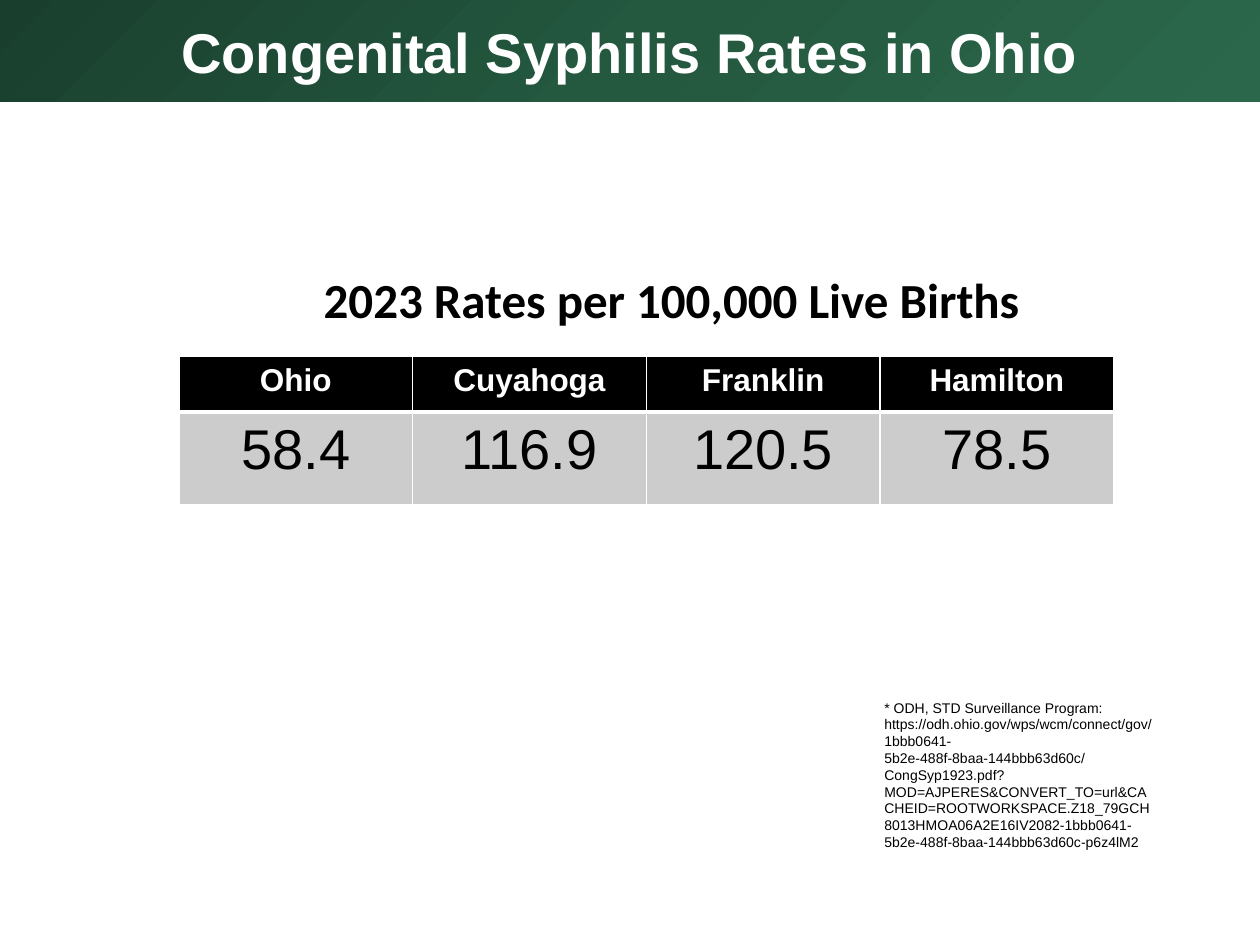
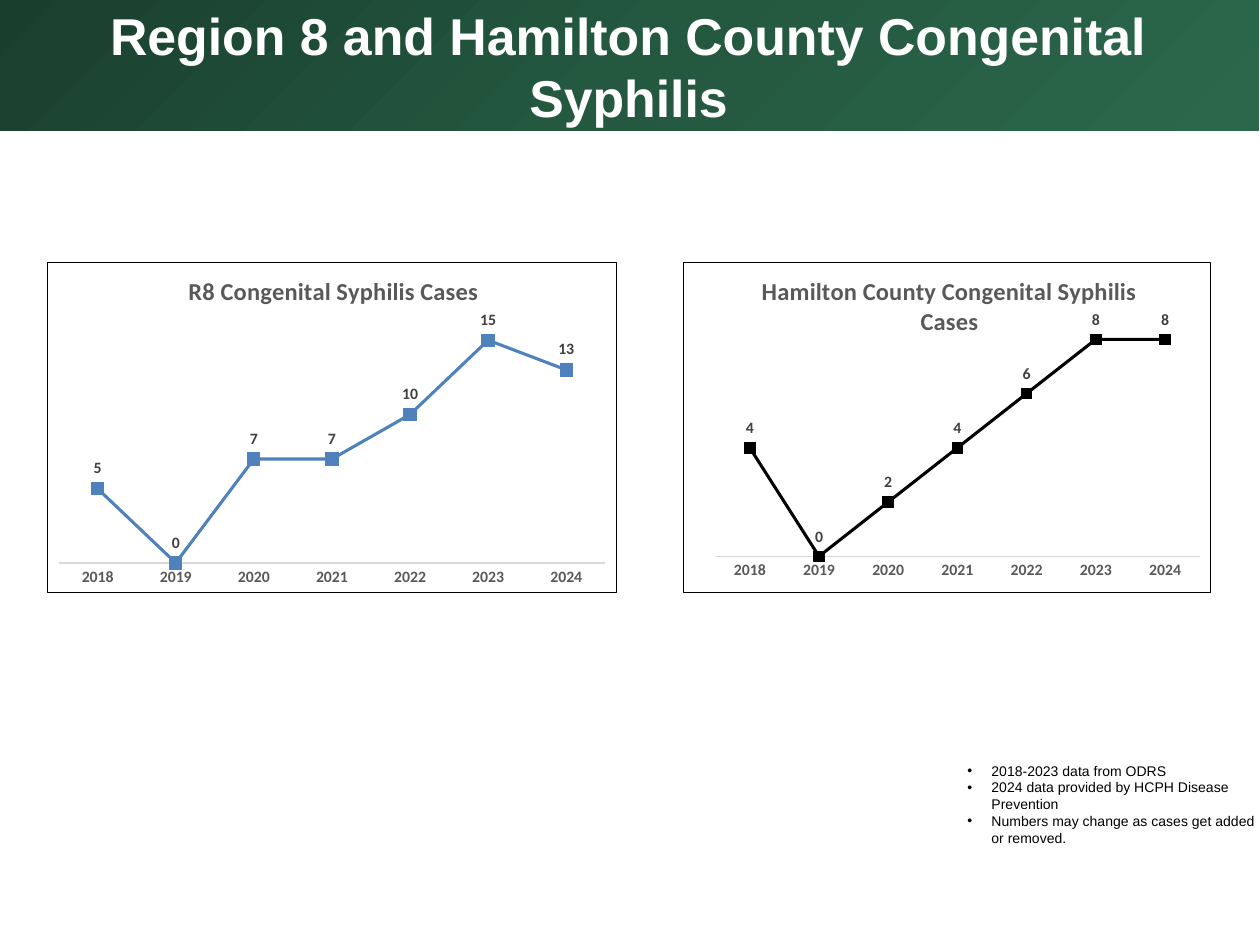
import copy

import lxml.etree
import pptx
import pptx.chart.data
import pptx.dml.color
import pptx.enum.chart
import pptx.enum.shapes
import pptx.enum.text
import pptx.oxml
import pptx.oxml.ns
import pptx.util

Inches = pptx.util.Inches
Pt = pptx.util.Pt
RGBColor = pptx.dml.color.RGBColor
qn = pptx.oxml.ns.qn
CENTER = pptx.enum.text.PP_ALIGN.CENTER
MIDDLE = pptx.enum.text.MSO_ANCHOR.MIDDLE

BLACK = RGBColor(0x00, 0x00, 0x00)
WHITE = RGBColor(0xFF, 0xFF, 0xFF)
BAND_GREENS = [(0, RGBColor(0x19, 0x3E, 0x2D)),
               (0.5, RGBColor(0x24, 0x58, 0x3F)),
               (1, RGBColor(0x2B, 0x68, 0x4B))]
CELL_GRAY = RGBColor(0xCC, 0xCC, 0xCC)
AXIS_GRAY = RGBColor(0xD9, 0xD9, 0xD9)
TEXT_GRAY = RGBColor(0x59, 0x59, 0x59)
LABEL_GRAY = RGBColor(0x40, 0x40, 0x40)
SERIES_BLUE = RGBColor(0x4F, 0x81, 0xBD)

BAND_TITLE = {"name": "Arial", "bold": True, "color": WHITE}
SUBTITLE = {"name": "Calibri", "size": Pt(28), "bold": True, "color": BLACK}
NOTE = {"name": "Arial", "size": Pt(8), "color": BLACK}
TABLE_HEAD = {"name": "Arial", "size": Pt(18), "bold": True, "color": WHITE}
TABLE_VALUE = {"name": "Arial", "size": Pt(32), "bold": False, "color": BLACK}
CHART_TEXT = {"name": "Calibri", "size": Pt(10), "color": BLACK}
CHART_TITLE = {"name": "Calibri", "size": Pt(14), "bold": True, "color": TEXT_GRAY}
AXIS_TEXT = {"name": "Calibri", "size": Pt(9), "bold": True, "color": TEXT_GRAY}
LABEL_TEXT = {**AXIS_TEXT, "color": LABEL_GRAY}

RATES = {"Ohio": "58.4", "Cuyahoga": "116.9", "Franklin": "120.5", "Hamilton": "78.5"}
RATES_SOURCE = (
    "* ODH, STD Surveillance Program: https://odh.ohio.gov/wps/wcm/connect/gov/"
    "1bbb0641-5b2e-488f-8baa-144bbb63d60c/CongSyp1923.pdf?MOD=AJPERES&CONVERT_TO=url"
    "&CACHEID=ROOTWORKSPACE.Z18_79GCH8013HMOA06A2E16IV2082-1bbb0641-5b2e-488f-8baa-"
    "144bbb63d60c-p6z4lM2")
CASE_NOTES = ["2018-2023 data from ODRS",
              "2024 data provided by HCPH Disease Prevention",
              "Numbers may change as cases get added or removed."]
YEARS = [str(year) for year in range(2018, 2025)]
CASE_CHARTS = [
    {"title": "R8 Congenital Syphilis Cases", "cases": [5, 0, 7, 7, 10, 15, 13],
     "box": (0.37, 2.08, 4.53, 2.63), "color": SERIES_BLUE, "marker": 7, "top": 16,
     "title_at": (0.24, 0.02), "plot_at": (0.02, 0.19, 0.96, 0.72)},
    {"title": "Hamilton County Congenital Syphilis Cases", "cases": [4, 0, 2, 4, 6, 8, 8],
     "box": (5.42, 2.08, 4.19, 2.63), "color": BLACK, "marker": 6, "top": 9,
     "title_at": (0.14, 0.02), "plot_at": (0.06, 0.15, 0.92, 0.74)},
]


def style(font, look):
    for key, value in look.items():
        if key == "color":
            font.color.rgb = value
        else:
            setattr(font, key, value)


def add_text(page, box, lines, look, align=None, anchor=None, bullet=None):
    frame = page.shapes.add_textbox(*map(Inches, box)).text_frame
    frame.word_wrap = True
    frame.vertical_anchor = anchor
    for index, line in enumerate(lines):
        para = frame.add_paragraph() if index else frame.paragraphs[0]
        para.alignment = align
        if bullet:
            add_bullet(para, bullet)
        span = para.add_run()
        span.text = line
        style(span.font, look)


def add_bullet(para, mark):
    props = para._p.get_or_add_pPr()
    props.set("marL", str(Inches(0.19)))
    props.set("indent", str(Inches(-0.19)))
    lxml.etree.SubElement(props, qn("a:buFont")).set("typeface", "Arial")
    lxml.etree.SubElement(props, qn("a:buChar")).set("char", mark)


def add_title_band(page, box, title, size):
    band = page.shapes.add_shape(pptx.enum.shapes.MSO_SHAPE.RECTANGLE, *map(Inches, box))
    band.shadow.inherit = False
    band.line.fill.background()
    band.fill.gradient()
    band.fill.gradient_angle = 315
    stop_list = band._element.spPr.find(".//" + qn("a:gsLst"))
    stop_list.append(copy.deepcopy(stop_list[-1]))
    for stop, (position, color) in zip(band.fill.gradient_stops, BAND_GREENS):
        stop.position = position
        stop.color.rgb = color
    frame = band.text_frame
    frame.word_wrap = True
    frame.vertical_anchor = MIDDLE
    para = frame.paragraphs[0]
    para.alignment = CENTER
    span = para.add_run()
    span.text = title
    style(span.font, {**BAND_TITLE, "size": Pt(size)})


def set_cell_borders(cell, widths):
    """Give the cell white borders; widths maps the sides L, R, T, B to points."""
    props = cell._tc.get_or_add_tcPr()
    for index, side in enumerate("LRTB"):
        props.insert(index, pptx.oxml.parse_xml(
            f'<a:ln{side} {pptx.oxml.ns.nsdecls("a")} w="{Pt(widths[side])}">'
            f'<a:solidFill><a:srgbClr val="{WHITE}"/></a:solidFill></a:ln{side}>'))


def add_rate_table(page, box):
    table = page.shapes.add_table(2, len(RATES), *map(Inches, box)).table
    table.first_row = table.horz_banding = False
    for row, height in zip(table.rows, (0.44, 0.74)):
        row.height = Inches(height)
    row_looks = [(RATES.keys(), TABLE_HEAD, BLACK, {"L": 1, "R": 1, "T": 1, "B": 3}),
                 (RATES.values(), TABLE_VALUE, CELL_GRAY, {"L": 1, "R": 1, "T": 3, "B": 1})]
    for row, (texts, look, fill, widths) in enumerate(row_looks):
        for column, text in enumerate(texts):
            cell = table.cell(row, column)
            cell.fill.solid()
            cell.fill.fore_color.rgb = fill
            set_cell_borders(cell, widths)
            para = cell.text_frame.paragraphs[0]
            para.alignment = CENTER
            span = para.add_run()
            span.text = text
            style(span.font, look)


def manual_layout(place, inner=False):
    """Return a layout element for x, y and optional width, height as chart fractions."""
    target = '<c:layoutTarget val="inner"/>' if inner else ""
    modes = '<c:xMode val="edge"/><c:yMode val="edge"/>'
    sizes = "".join(f'<c:{name} val="{value}"/>' for name, value in zip("xywh", place))
    return pptx.oxml.parse_xml(
        f'<c:layout {pptx.oxml.ns.nsdecls("c")}><c:manualLayout>{target}{modes}{sizes}'
        '</c:manualLayout></c:layout>')


def place_in_chart(element, layout, index):
    for old in element.findall(qn("c:layout")):
        element.remove(old)
    element.insert(index, layout)


def frame_chart(chart):
    """Give the chart area a white fill and a thin square black border."""
    space = chart._chartSpace
    for corners in space.findall(qn("c:roundedCorners")):
        space.remove(corners)
    names = pptx.oxml.ns.nsdecls("c", "a")
    space.find(qn("c:date1904")).addnext(
        pptx.oxml.parse_xml(f'<c:roundedCorners {names} val="0"/>'))
    space.find(qn("c:chart")).addnext(pptx.oxml.parse_xml(
        f'<c:spPr {names}><a:solidFill><a:srgbClr val="{WHITE}"/></a:solidFill>'
        f'<a:ln w="{Pt(0.75)}"><a:solidFill><a:srgbClr val="{BLACK}"/></a:solidFill></a:ln>'
        '</c:spPr>'))


def style_axes(chart, top):
    years = chart.category_axis
    years.major_tick_mark = pptx.enum.chart.XL_TICK_MARK.NONE
    years.format.line.color.rgb = AXIS_GRAY
    years.format.line.width = Pt(0.75)
    style(years.tick_labels.font, AXIS_TEXT)
    cases = chart.value_axis
    for key, value in {"visible": False, "has_major_gridlines": False,
                       "minimum_scale": 0, "maximum_scale": top}.items():
        setattr(cases, key, value)


def style_series(series, color, marker_size):
    series.smooth = False
    series.format.line.color.rgb = color
    series.format.line.width = Pt(1.75)
    marker = series.marker
    marker.style = pptx.enum.chart.XL_MARKER_STYLE.SQUARE
    marker.size = marker_size
    marker.format.fill.solid()
    marker.format.fill.fore_color.rgb = color
    marker.format.line.color.rgb = color
    labels = series.data_labels
    labels.show_value = True
    labels.position = pptx.enum.chart.XL_LABEL_POSITION.ABOVE
    style(labels.font, LABEL_TEXT)


def add_case_chart(page, box, title, cases, color, marker, top, title_at, plot_at):
    data = pptx.chart.data.CategoryChartData()
    data.categories = YEARS
    data.add_series("Series 1", cases)
    chart = page.shapes.add_chart(
        pptx.enum.chart.XL_CHART_TYPE.LINE_MARKERS, *map(Inches, box), data).chart
    style(chart.font, CHART_TEXT)
    chart.has_legend = False
    chart.has_title = True
    span = chart.chart_title.text_frame.paragraphs[0].add_run()
    span.text = title
    style(span.font, CHART_TITLE)
    style_axes(chart, top)
    plot = chart.plots[0]
    plot.vary_by_categories = False
    style_series(plot.series[0], color, marker)
    place_in_chart(chart.chart_title._element, manual_layout(title_at), 1)
    plot_area = chart._chartSpace.find(".//" + qn("c:plotArea"))
    place_in_chart(plot_area, manual_layout(plot_at, inner=True), 0)
    frame_chart(chart)


def build_rates_page(page):
    add_text(page, (0.83, 1.75, 9, 1.25), ["2023 Rates per 100,000 Live Births"],
             SUBTITLE, CENTER, MIDDLE)
    add_text(page, (6.92, 5.5, 2.33, 1.18), [RATES_SOURCE], NOTE)
    add_title_band(page, (0, 0, 10, 0.81), "Congenital Syphilis Rates in Ohio", 32)
    add_rate_table(page, (1.42, 2.83, 7.42, 1.18))


def build_cases_page(page):
    add_text(page, (7.58, 6, 2.58, 0.77), CASE_NOTES, NOTE, bullet="•")
    for case_chart in CASE_CHARTS:
        add_case_chart(page, **case_chart)
    add_title_band(page, (-0.01, 0, 10, 1.04),
                   "Region 8 and Hamilton County Congenital Syphilis", 29.6)


def main():
    deck = pptx.Presentation()
    deck.slide_width, deck.slide_height = Inches(10), Inches(7.5)
    for build_page in (build_rates_page, build_cases_page):
        build_page(deck.slides.add_slide(deck.slide_layouts[6]))
    deck.save("out.pptx")


if __name__ == "__main__":
    main()
